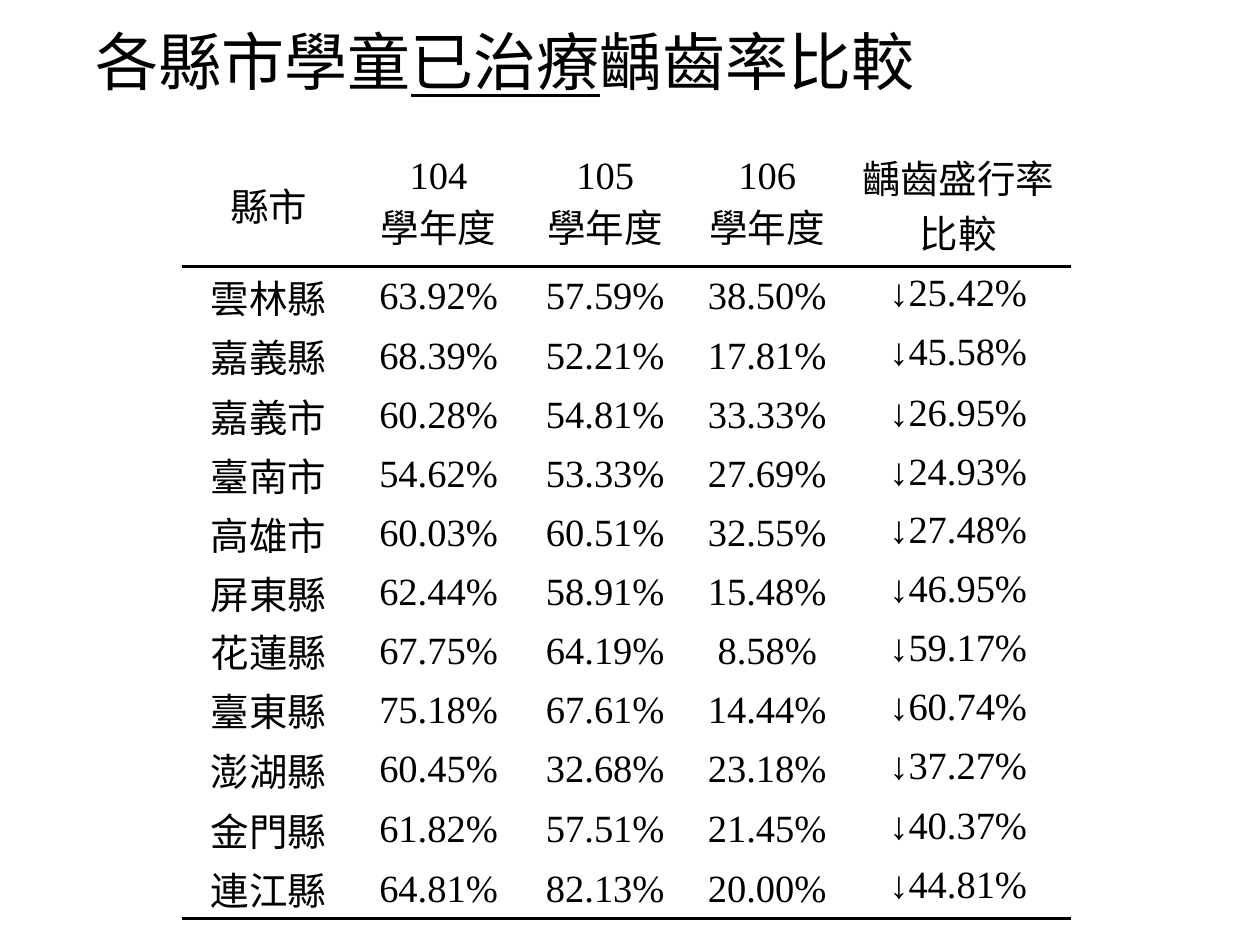
from lxml.etree import SubElement
from pptx import Presentation
from pptx.dml.color import RGBColor
from pptx.enum.text import MSO_ANCHOR, PP_ALIGN
from pptx.oxml.ns import qn
from pptx.util import Cm, Pt

COLORS = {"ink": "000000", "paper": "FFFFFF"}
LATIN_FONT, CJK_FONT = "Times New Roman", "Noto Sans CJK SC"
PLAIN_TABLE_STYLE = "{2D5ABB26-0587-4C30-8999-92F81FD0307C}"


def format_run(run, size, latin):
    run.font.size = Pt(size)
    run.font.name = latin
    run.font.color.rgb = RGBColor.from_string(COLORS["ink"])
    SubElement(run.font._element, qn("a:ea"), typeface=CJK_FONT)


def set_borders(cell, ruled_sides):
    for side in ("lnL", "lnR", "lnT", "lnB"):
        border = SubElement(cell._tc.get_or_add_tcPr(), qn(f"a:{side}"), w=str(Pt(1.5)))
        if side in ruled_sides:
            fill = SubElement(border, qn("a:solidFill"))
            SubElement(fill, qn("a:srgbClr"), val=COLORS["ink"])
        else:
            SubElement(border, qn("a:noFill"))


prs = Presentation()
prs.slide_width, prs.slide_height = Cm(25.4), Cm(19.05)
slide = prs.slides.add_slide(prs.slide_layouts[6])

# Title with the key words underlined
title = slide.shapes.add_textbox(Cm(1.68), Cm(0), Cm(21.9), Cm(2.64)).text_frame
title.word_wrap = True
title.vertical_anchor = MSO_ANCHOR.MIDDLE
heading = title.paragraphs[0]
heading.line_spacing = 0.9
for words, underlined in [("各縣市學童", False), ("已治療", True), ("齲齒率比較", False)]:
    run = heading.add_run()
    run.text = words
    format_run(run, 36, CJK_FONT)
    run.font.underline = underlined

# Rates by county and school year
rates = [
    ("縣市", "104\n學年度", "105\n學年度", "106\n學年度", "齲齒盛行率\n比較"),
    ("雲林縣", "63.92%", "57.59%", "38.50%", "↓25.42%"),
    ("嘉義縣", "68.39%", "52.21%", "17.81%", "↓45.58%"),
    ("嘉義市", "60.28%", "54.81%", "33.33%", "↓26.95%"),
    ("臺南市", "54.62%", "53.33%", "27.69%", "↓24.93%"),
    ("高雄市", "60.03%", "60.51%", "32.55%", "↓27.48%"),
    ("屏東縣", "62.44%", "58.91%", "15.48%", "↓46.95%"),
    ("花蓮縣", "67.75%", "64.19%", "8.58%", "↓59.17%"),
    ("臺東縣", "75.18%", "67.61%", "14.44%", "↓60.74%"),
    ("澎湖縣", "60.45%", "32.68%", "23.18%", "↓37.27%"),
    ("金門縣", "61.82%", "57.51%", "21.45%", "↓40.37%"),
    ("連江縣", "64.81%", "82.13%", "20.00%", "↓44.81%"),
]
column_widths = [3.51, 3.34, 3.38, 3.15, 4.55]
row_heights = [2.5, 1.17, 1.22] + [1.17] * 6 + [1.22, 1.17, 1.22]
last_row, last_column = len(rates) - 1, len(column_widths) - 1

table = slide.shapes.add_table(
    len(rates), len(column_widths), Cm(3.66), Cm(2.87),
    Cm(sum(column_widths)), Cm(sum(row_heights))).table
table.first_row = table.horz_banding = False
table._tbl.tblPr.find(qn("a:tableStyleId")).text = PLAIN_TABLE_STYLE
for column, width in zip(table.columns, column_widths):
    column.width = Cm(width)

# Rules under the header and under the last row
ruled_sides = {0: ["lnB"], 1: ["lnT"], last_row: ["lnB"]}

for r, (row, height) in enumerate(zip(rates, row_heights)):
    table.rows[r].height = Cm(height)
    for c, entry in enumerate(row):
        cell = table.cell(r, c)
        cell.text_frame.text = entry
        for paragraph in cell.text_frame.paragraphs:
            paragraph.alignment = PP_ALIGN.CENTER
            format_run(paragraph.runs[0], 22, LATIN_FONT)
        # The comparison column keeps its text at the top
        if c < last_column:
            cell.vertical_anchor = MSO_ANCHOR.MIDDLE
            if r > 0:
                cell.margin_left = cell.margin_right = cell.margin_top = Cm(0.03)
                cell.margin_bottom = Cm(0)
        set_borders(cell, ruled_sides.get(r, []))
        cell.fill.solid()
        cell.fill.fore_color.rgb = RGBColor.from_string(COLORS["paper"])

prs.save("out.pptx")
